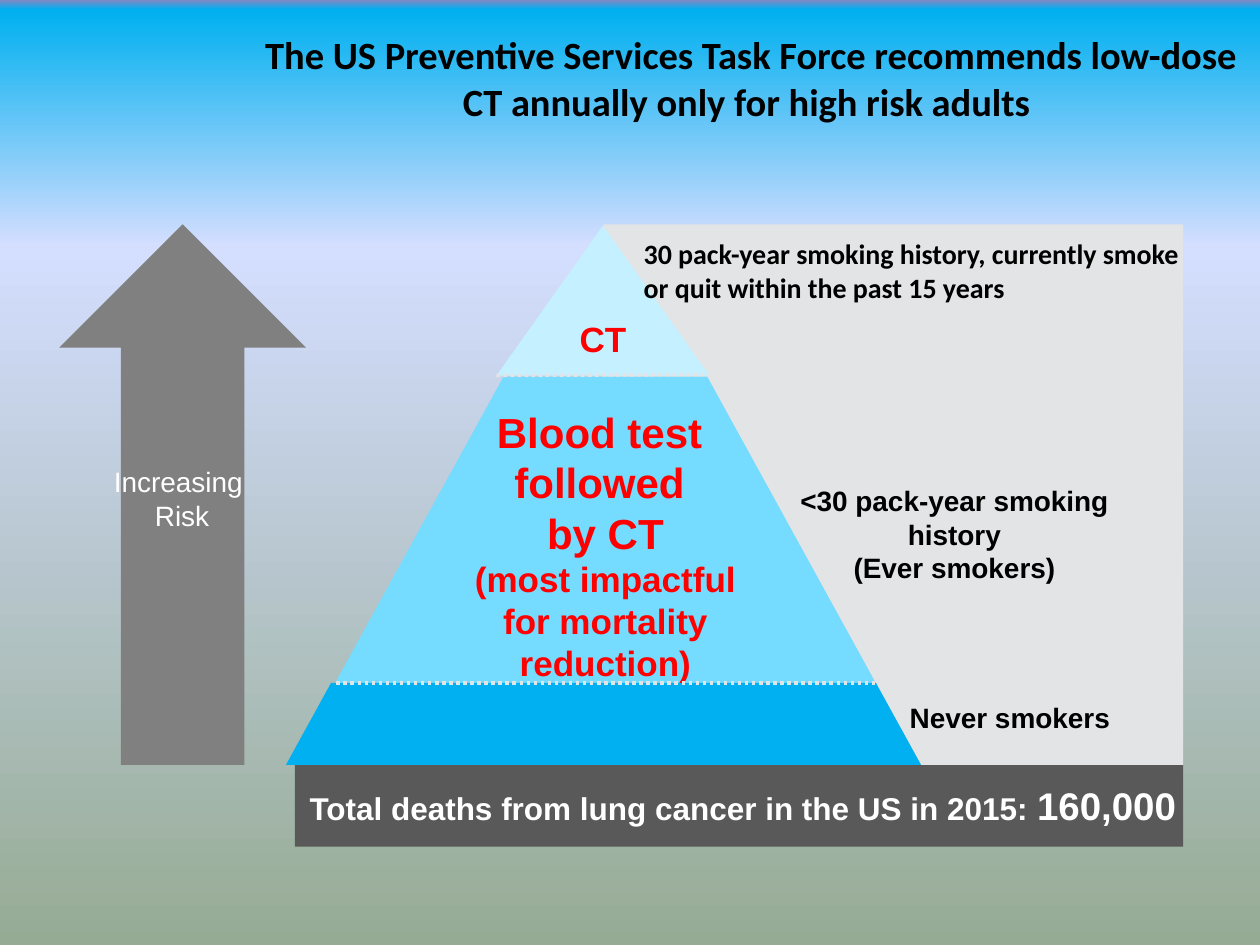
from lxml.etree import SubElement
from pptx import Presentation
from pptx.dml.color import RGBColor
from pptx.enum.dml import MSO_LINE
from pptx.enum.shapes import MSO_CONNECTOR, MSO_SHAPE as SHAPE
from pptx.enum.text import MSO_ANCHOR, MSO_AUTO_SIZE, PP_ALIGN
from pptx.oxml import parse_xml
from pptx.oxml.ns import nsdecls, qn
from pptx.util import Inches, Pt

BLACK = RGBColor(0x00, 0x00, 0x00)
WHITE = RGBColor(0xFF, 0xFF, 0xFF)
RED = RGBColor(0xFF, 0x00, 0x00)
DARK_GRAY = RGBColor(0x59, 0x59, 0x59)
MID_GRAY = RGBColor(0x80, 0x80, 0x80)
PALE_GRAY = RGBColor(0xE3, 0xE4, 0xE5)
PALE_BLUE = RGBColor(0xC5, 0xF0, 0xFF)
LIGHT_BLUE = RGBColor(0x75, 0xDB, 0xFF)
BLUE = RGBColor(0x00, 0xB0, 0xF0)

BACKGROUND = [(0, "8488C4"), (1, "00B0F0"), (26, "D4DEFF"), (100, "96AB94")]

CENTER, LEFT = PP_ALIGN.CENTER, PP_ALIGN.LEFT

# Each paragraph is a list of (text, size) runs.
CT_TEXT = [[("CT", 20)]]
BLOOD_TEST_TEXT = [
    [("Blood test ", 24)],
    [("followed ", 24)],
    [("by CT", 24)],
    [("(most impactful for mortality reduction)", 20)],
]

# Preset, place, fill, adjustment, paragraphs, bottom inset; back to front.
SHAPES = [
    (SHAPE.RECTANGLE, (2.34, 6.07, 7.05, 0.65), DARK_GRAY, None, [], 0.05),
    (SHAPE.RECTANGLE, (4.79, 1.78, 4.6, 4.29), PALE_GRAY, None, [], 0.05),
    (SHAPE.ISOSCELES_TRIANGLE, (3.94, 1.79, 1.69, 1.19), PALE_BLUE, None, CT_TEXT, 0.05),
    (SHAPE.UP_ARROW, (0.47, 1.78, 1.96, 4.29), MID_GRAY, None, [], 0.05),
    (SHAPE.TRAPEZOID, (2.66, 2.99, 4.29, 2.43), LIGHT_BLUE, 0.55, BLOOD_TEST_TEXT, 0.31),
    (SHAPE.TRAPEZOID, (2.27, 5.42, 5.04, 0.65), BLUE, 0.55, [], 0.05),
]

DIVIDERS = [((3.94, 2.98), (6.13, 2.97)), ((2.67, 5.42), (6.96, 5.42))]

# Place, font, colour, bold, alignment, paragraphs.
LABELS = [
    ((0.35, 3.64, 2.19, 0.57), "Arial", WHITE, False, CENTER,
     [[("Increasing ", 16)], [("Risk", 16)]]),
    ((2.35, 6.16, 7.09, 0.47), "Arial", WHITE, True, CENTER,
     [[("Total deaths from lung cancer in the US in 2015: ", 18), ("160,000", 22)]]),
    ((6.95, 5.51, 2.13, 0.37), "Arial", BLACK, True, CENTER,
     [[("Never smokers", 16)]]),
    ((5.89, 3.79, 3.37, 0.91), "Arial", BLACK, True, CENTER,
     [[("<30 pack-year smoking history", 16)], [("(Ever smokers)", 16)]]),
    ((5.01, 1.83, 4.61, 0.64), "Calibri", BLACK, True, LEFT,
     [[("30 pack-year smoking history, currently smoke or quit within the past 15 years", 16)]]),
    ((1.99, 0.2, 7.94, 0.84), "Calibri", BLACK, True, CENTER,
     [[("The US Preventive Services Task Force recommends low-dose CT annually "
        "only for high risk adults ", 22)]]),
]


def set_background(page):
    """Fill the page with the vertical multi-stop gradient."""
    page.background.fill.solid()
    properties = page.background._cSld.bg.bgPr
    stops = "".join(
        f'<a:gs pos="{percent * 1000}"><a:srgbClr val="{color}"/></a:gs>'
        for percent, color in BACKGROUND
    )
    gradient = parse_xml(
        f'<a:gradFill {nsdecls("a")} rotWithShape="1"><a:gsLst>{stops}</a:gsLst>'
        '<a:lin ang="5400000" scaled="0"/></a:gradFill>'
    )
    properties.replace(properties.find(qn("a:solidFill")), gradient)


def write_text(frame, paragraphs, font, color, bold, align):
    frame.word_wrap = True
    for index, runs in enumerate(paragraphs):
        para = frame.paragraphs[0] if index == 0 else frame.add_paragraph()
        para.alignment = align
        for text, size in runs:
            span = para.add_run()
            span.text = text
            span.font.color.rgb = color
            formats = {"name": font, "size": Pt(size), "bold": bold}
            for name, value in formats.items():
                setattr(span.font, name, value)


def add_filled_shape(page, preset, place, fill, adjustment, paragraphs, bottom):
    shape = page.shapes.add_shape(preset, *map(Inches, place))
    shape.shadow.inherit = False
    shape.fill.solid()
    shape.fill.fore_color.rgb = fill
    shape.line.fill.background()
    if adjustment is not None:
        shape.adjustments[0] = adjustment
    if paragraphs:
        frame = shape.text_frame
        frame.vertical_anchor = MSO_ANCHOR.MIDDLE
        frame.margin_bottom = Inches(bottom)
        write_text(frame, paragraphs, "Arial", RED, True, CENTER)


def add_divider(page, start, end):
    line = page.shapes.add_connector(MSO_CONNECTOR.STRAIGHT, *map(Inches, start + end))
    line.line.color.rgb = PALE_GRAY
    line.line.width = Pt(2)
    line.line.dash_style = MSO_LINE.ROUND_DOT
    SubElement(line._element.spPr, qn("a:effectLst"))


def add_label(page, place, font, color, bold, align, paragraphs):
    box = page.shapes.add_textbox(*map(Inches, place))
    write_text(box.text_frame, paragraphs, font, color, bold, align)
    box.text_frame.auto_size = MSO_AUTO_SIZE.SHAPE_TO_FIT_TEXT


def main():
    deck = Presentation()
    deck.slide_width, deck.slide_height = Inches(10), Inches(7.5)
    page = deck.slides.add_slide(deck.slide_layouts[6])
    set_background(page)
    for shape in SHAPES:
        add_filled_shape(page, *shape)
    for start, end in DIVIDERS:
        add_divider(page, start, end)
    for label in LABELS:
        add_label(page, *label)
    deck.save("out.pptx")


if __name__ == "__main__":
    main()
